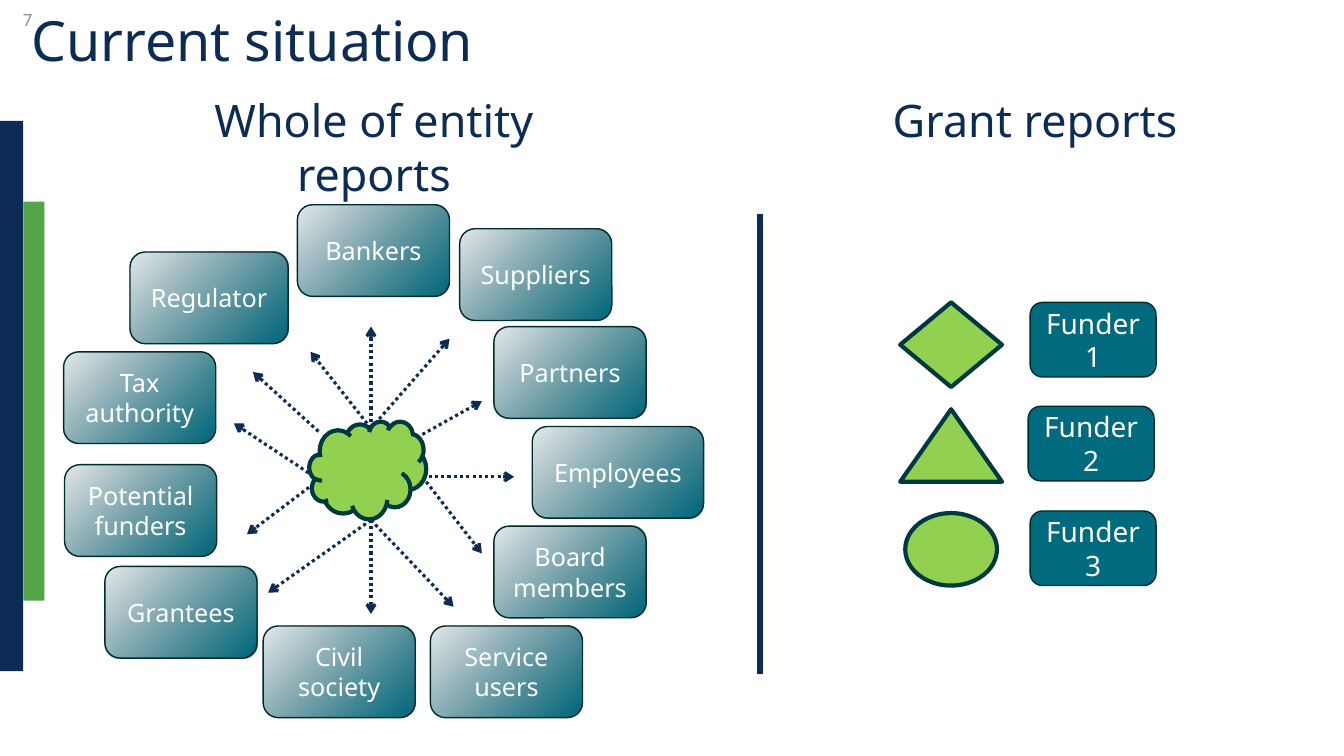
from dataclasses import dataclass

from lxml import etree
from pptx import Presentation
from pptx.dml.color import RGBColor
from pptx.enum.dml import MSO_LINE
from pptx.enum.shapes import MSO_CONNECTOR, MSO_SHAPE
from pptx.enum.text import MSO_ANCHOR, PP_ALIGN
from pptx.oxml import parse_xml
from pptx.oxml.ns import nsdecls, qn
from pptx.util import Pt

RECTANGLE = MSO_SHAPE.RECTANGLE
ROUNDED = MSO_SHAPE.ROUNDED_RECTANGLE
DIAMOND = MSO_SHAPE.FLOWCHART_DECISION
TRIANGLE = MSO_SHAPE.FLOWCHART_EXTRACT
ELLIPSE = MSO_SHAPE.OVAL
CLOUD = MSO_SHAPE.CLOUD
STRAIGHT = MSO_CONNECTOR.STRAIGHT
DOTTED = MSO_LINE.ROUND_DOT
LEFT, CENTER, RIGHT = PP_ALIGN.LEFT, PP_ALIGN.CENTER, PP_ALIGN.RIGHT
TOP, MIDDLE = MSO_ANCHOR.TOP, MSO_ANCHOR.MIDDLE

FONT = "Noto Sans"
COLORS = {
    "navy": "0C2C56",
    "green": "56A448",
    "lime": "92D050",
    "teal": "006A7E",
    "dark_teal": "003F4B",
    "box_line": "002B2F",
    "symbol_line": "003A40",
    "gray": "8C8F9A",
    "white": "FFFFFF",
}
GRADIENT = f"""<a:gradFill {nsdecls("a")} rotWithShape="1"><a:gsLst>
<a:gs pos="2000"><a:srgbClr val="{COLORS['teal']}"/></a:gs>
<a:gs pos="100000"><a:srgbClr val="{COLORS['dark_teal']}"><a:alpha val="10000"/></a:srgbClr></a:gs>
</a:gsLst><a:path path="circle"><a:fillToRect l="100000" t="100000"/></a:path>
<a:tileRect r="-100000" b="-100000"/></a:gradFill>"""


@dataclass
class Stakeholder:
    text: str
    left: float
    top: float
    width: float = 108.7
    height: float = 65.5


@dataclass
class Spokes:
    start: tuple[float, float]
    ends: list[tuple[float, float]]


@dataclass
class Funder:
    text: str
    left: float
    top: float
    symbol: MSO_SHAPE
    symbol_box: tuple[float, float, float, float]


STAKEHOLDERS = [
    Stakeholder("Employees", 380.2, 304.6, width=122.4),
    Stakeholder("Regulator", 92.9, 180, width=113),
    Stakeholder("Civil society", 187.9, 447.1),
    Stakeholder("Partners", 352.8, 233.3),
    Stakeholder("Bankers", 212.4, 146.2),
    Stakeholder("Grantees", 74.9, 404.6),
    Stakeholder("Suppliers", 328.3, 163.4),
    Stakeholder("Potential funders", 46.1, 331.9),
    Stakeholder("Board members", 352.8, 375.8),
    Stakeholder("Tax authority", 45.4, 251.3),
    Stakeholder("Service users", 307.4, 447.1),
]
SPOKES = [
    Spokes((265, 306), [(265, 233.3), (321.1, 241.9), (221.8, 251.3)]),
    Spokes((301.7, 310.3), [(344.2, 286.6)]),
    Spokes((301.7, 340.6), [(367.2, 340.6), (344.2, 395.3)]),
    Spokes((265, 371.5), [(324, 433.4), (265, 438.5), (191.5, 423.4)]),
    Spokes((227.9, 342.7), [(176.4, 381.6), (167, 302.4)]),
    Spokes((227.5, 308.2), [(180.7, 265.7)]),
]
FUNDERS = [
    Funder("Funder 1", 735.8, 216, DIAMOND, (643, 216, 72.7, 60.5)),
    Funder("Funder 2", 734.4, 290.2, TRIANGLE, (643, 292.3, 72.7, 51.8)),
    Funder("Funder 3", 735.8, 365, ELLIPSE, (646.6, 366.5, 65.5, 51.8)),
]


def color(name: str) -> RGBColor:
    return RGBColor.from_string(COLORS[name])


def write_text(shape, text: str, *, size: float, ink: str = "white", align=CENTER,
               anchor=MIDDLE, line_spacing: float = 1.0) -> None:
    frame = shape.text_frame
    frame.word_wrap = True
    frame.vertical_anchor = anchor
    paragraph = frame.paragraphs[0]
    paragraph.alignment = align
    paragraph.line_spacing = line_spacing
    run = paragraph.add_run()
    run.text = text
    run.font.name = FONT
    run.font.size = Pt(size)
    run.font.color.rgb = color(ink)


def add_text(slide, box: tuple, text: str, **text_format) -> None:
    shape = slide.shapes.add_textbox(*map(Pt, box))
    write_text(shape, text, **text_format)


def add_shape(slide, kind: MSO_SHAPE, box: tuple, fill: str, line: str = "", line_width: float = 1):
    shape = slide.shapes.add_shape(kind, *map(Pt, box))
    shape.shadow.inherit = False
    shape.fill.solid()
    shape.fill.fore_color.rgb = color(fill)
    if line:
        shape.line.color.rgb = color(line)
        shape.line.width = Pt(line_width)
    else:
        shape.line.fill.background()
    return shape


def add_line(slide, start: tuple, end: tuple, width: float, arrow: bool = False) -> None:
    connector = slide.shapes.add_connector(STRAIGHT, *map(Pt, start + end))
    connector.line.color.rgb = color("navy")
    connector.line.width = Pt(width)
    properties = connector._element.spPr
    if arrow:
        connector.line.dash_style = DOTTED
        etree.SubElement(properties.find(qn("a:ln")), qn("a:tailEnd"), type="arrow")
    etree.SubElement(properties, qn("a:effectLst"))


def add_stakeholder(slide, stakeholder: Stakeholder) -> None:
    box = (stakeholder.left, stakeholder.top, stakeholder.width, stakeholder.height)
    shape = add_shape(slide, ROUNDED, box, "teal", "box_line")
    properties = shape._element.spPr
    properties.replace(properties.find(qn("a:solidFill")), parse_xml(GRADIENT))
    write_text(shape, stakeholder.text, size=18)


def add_funder(slide, funder: Funder) -> None:
    label = add_shape(slide, ROUNDED, (funder.left, funder.top, 90, 53.3), "teal", "box_line")
    write_text(label, funder.text, size=20)
    add_shape(slide, funder.symbol, funder.symbol_box, "lime", "symbol_line", 3)


def main() -> None:
    presentation = Presentation()
    presentation.slide_width = Pt(960)
    presentation.slide_height = Pt(540)
    slide = presentation.slides.add_slide(presentation.slide_layouts[6])

    # Side bars, title and slide number
    add_shape(slide, RECTANGLE, (0, 86.4, 16.6, 393.1), "navy")
    add_shape(slide, RECTANGLE, (16.6, 144, 15.1, 285.1), "green")
    add_text(slide, (15.1, -5.8, 352.1, 74.2), "Current situation",
             size=39.6, ink="navy", align=LEFT, line_spacing=0.9)
    add_text(slide, (0, 0, 30.2, 28.8), "7", size=12, ink="gray", align=RIGHT)

    # Stakeholders around the entity
    for stakeholder in STAKEHOLDERS:
        add_stakeholder(slide, stakeholder)
    for spokes in SPOKES:
        for end in spokes.ends:
            add_line(slide, spokes.start, end, 2.25, arrow=True)

    # Funders with their own report shapes
    for funder in FUNDERS:
        add_funder(slide, funder)

    # Entity cloud and divider
    add_shape(slide, CLOUD, (221, 301, 83.5, 69.8), "lime", "symbol_line", 3)
    add_line(slide, (542.9, 152.6), (542.9, 481.7), 4.5)

    # Column headings
    add_text(slide, (92.9, 62.6, 348.5, 85), "Whole of entity reports", size=32, ink="navy", anchor=TOP)
    add_text(slide, (565.2, 62.6, 348.5, 46.1), "Grant reports", size=32, ink="navy", anchor=TOP)

    presentation.save("out.pptx")


if __name__ == "__main__":
    main()
